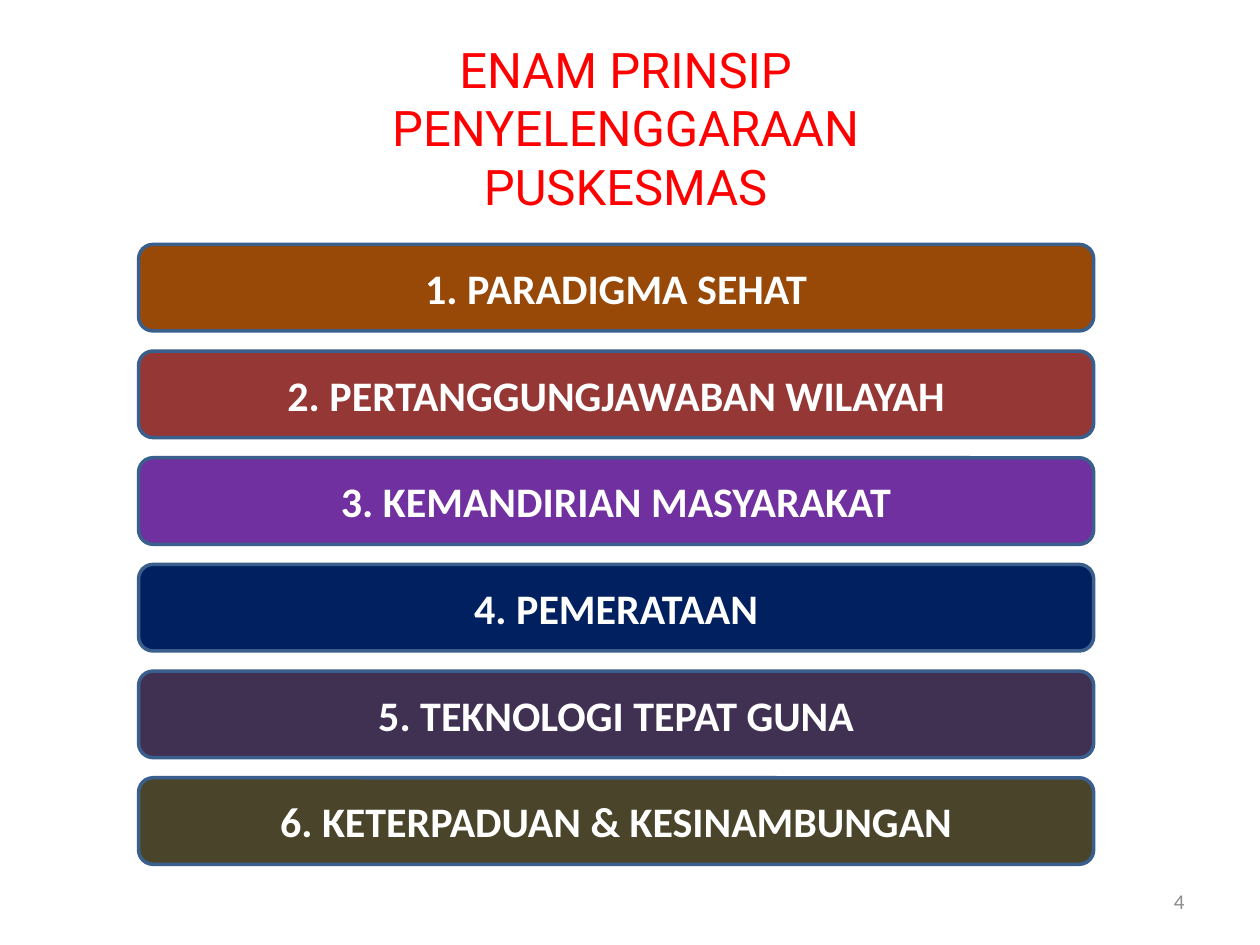
import pptx
import pptx.dml.color
import pptx.enum.shapes
import pptx.enum.text
import pptx.util

Inches = pptx.util.Inches
ALIGN = pptx.enum.text.PP_ALIGN
ANCHOR = pptx.enum.text.MSO_ANCHOR

PRINCIPLES = [
    ("1. PARADIGMA SEHAT", "984807"),
    ("2. PERTANGGUNGJAWABAN WILAYAH", "953735"),
    ("3. KEMANDIRIAN MASYARAKAT", "7030A0"),
    ("4. PEMERATAAN", "002060"),
    ("5. TEKNOLOGI TEPAT GUNA", "403152"),
    ("6. KETERPADUAN & KESINAMBUNGAN", "4A452A"),
]


def rgb(color):
    """Turn a hex string into a colour."""
    return pptx.dml.color.RGBColor.from_string(color)


def write(frame, wording, size, font, color, align, anchor, bold=False):
    """Write one formatted run into a text frame."""
    frame.word_wrap = True
    frame.vertical_anchor = anchor
    paragraph = frame.paragraphs[0]
    paragraph.alignment = align
    run = paragraph.add_run()
    run.text = wording
    run.font.size = pptx.util.Pt(size)
    run.font.name = font
    run.font.bold = bold
    run.font.color.rgb = rgb(color)


def place_title(slide, left, top, width, height):
    """Move and fill the title placeholder."""
    title = slide.shapes.title
    title.left, title.top = Inches(left), Inches(top)
    title.width, title.height = Inches(width), Inches(height)
    write(title.text_frame, "ENAM PRINSIP PENYELENGGARAAN PUSKESMAS",
          28, "Roboto", "FF0000", ALIGN.CENTER, ANCHOR.TOP)
    title.text_frame.auto_size = pptx.enum.text.MSO_AUTO_SIZE.SHAPE_TO_FIT_TEXT


def place_principles(slide, left, top, width, height, gap=0.16):
    """Stack the principles as equal bars that fill the box."""
    count = len(PRINCIPLES)
    bar_height = (height - gap * (count - 1)) / count
    for index, (principle, color) in enumerate(PRINCIPLES):
        bar = slide.shapes.add_shape(
            pptx.enum.shapes.MSO_SHAPE.ROUNDED_RECTANGLE,
            Inches(left), Inches(top + index * (bar_height + gap)),
            Inches(width), Inches(bar_height))
        bar.shadow.inherit = False
        bar.fill.solid()
        bar.fill.fore_color.rgb = rgb(color)
        bar.line.color.rgb = rgb("3A5F8C")
        bar.line.width = pptx.util.Pt(2)
        write(bar.text_frame, principle, 24, "Calibri", "FFFFFF",
              ALIGN.CENTER, ANCHOR.MIDDLE, bold=True)


def place_page_number(slide, left, top, width, height):
    """Put the page number at the right of the box."""
    page_number = slide.shapes.add_textbox(
        Inches(left), Inches(top), Inches(width), Inches(height))
    write(page_number.text_frame, "4", 12, "Calibri", "8C8C8C",
          ALIGN.RIGHT, ANCHOR.MIDDLE)


def main():
    """Build and save the slide."""
    deck = pptx.Presentation()
    deck.slide_width, deck.slide_height = Inches(10), Inches(7.5)
    slide = deck.slides.add_slide(deck.slide_layouts.get_by_name("Title Only"))
    place_title(slide, 1.85, 0.26, 6.23, 1.04)
    place_principles(slide, 1.1, 1.94, 7.58, 4.92)
    place_page_number(slide, 7.17, 6.95, 2.33, 0.4)
    deck.save("out.pptx")


if __name__ == "__main__":
    main()
